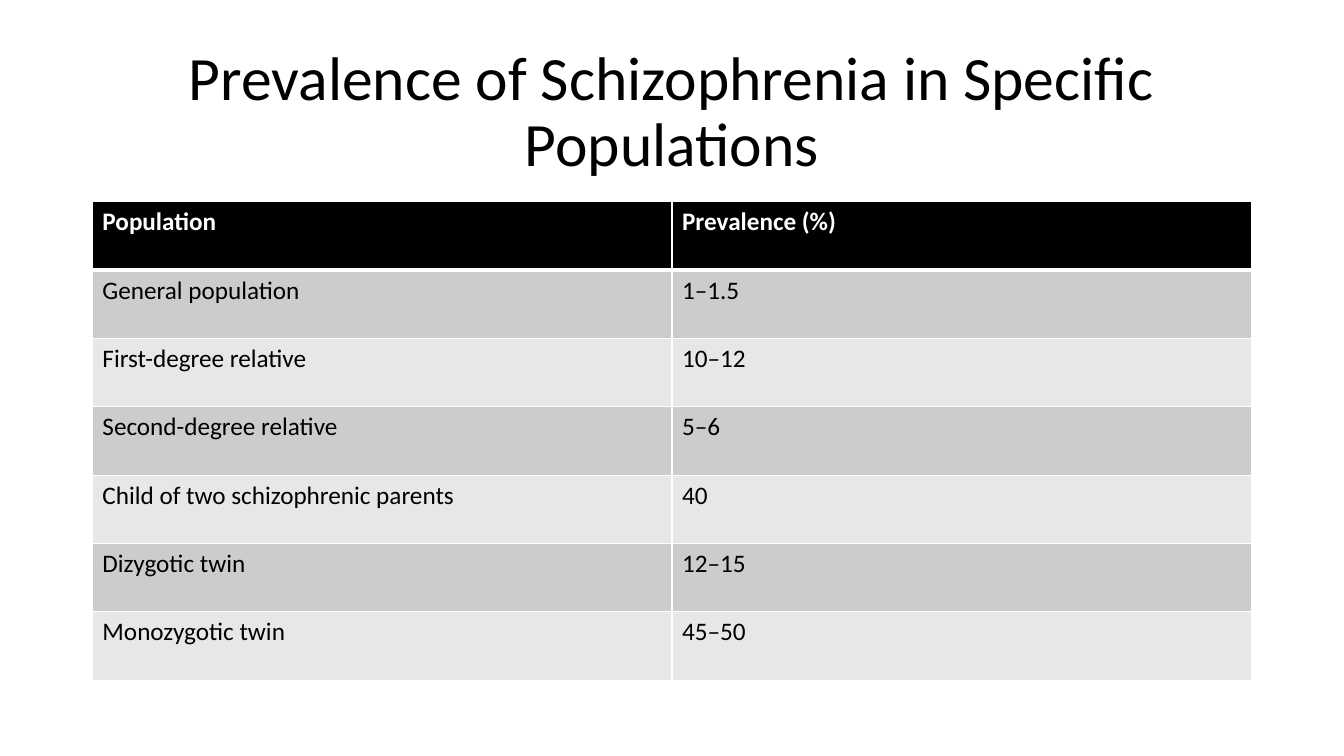
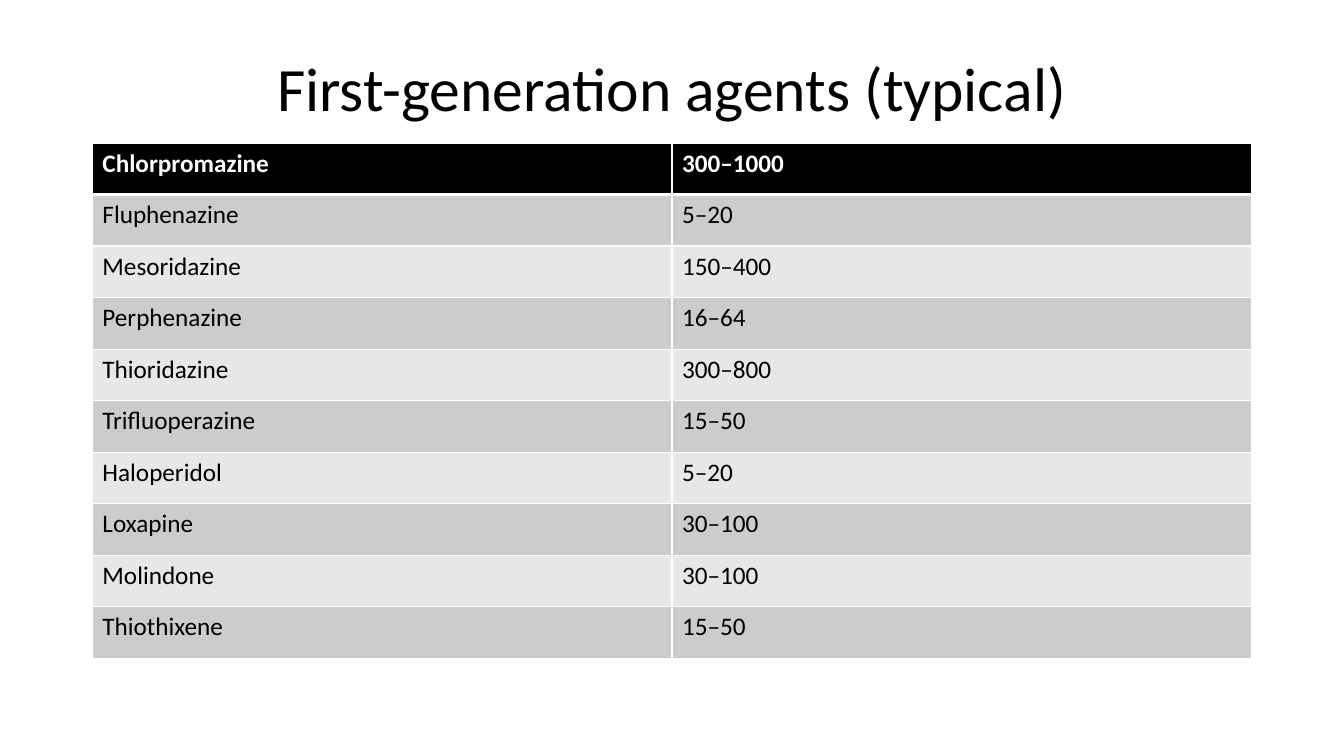
from dataclasses import dataclass

from lxml import etree
from pptx import Presentation
from pptx.dml.color import RGBColor
from pptx.enum import text
from pptx.oxml import ns
from pptx.util import Pt


@dataclass(frozen=True)
class Theme:
    font: str = "Calibri"
    ink: str = "000000"
    paper: str = "FFFFFF"
    bands: tuple = ("CCCCCC", "E7E7E7")
    title_size: int = 44
    cell_size: int = 18
    rule: int = 1
    header_rule: int = 3
    left: int = 66
    width: int = 828
    title_top: float = 28.8


THEME = Theme()

PREVALENCE = [
    ("Population", "Prevalence (%)"),
    ("General population", "1–1.5"),
    ("First-degree relative", "10–12"),
    ("Second-degree relative", "5–6"),
    ("Child of two schizophrenic parents", "40"),
    ("Dizygotic twin", "12–15"),
    ("Monozygotic twin", "45–50"),
]

AGENTS = [
    ("Chlorpromazine", "300–1000"),
    ("Fluphenazine", "5–20"),
    ("Mesoridazine", "150–400"),
    ("Perphenazine", "16–64"),
    ("Thioridazine", "300–800"),
    ("Trifluoperazine", "15–50"),
    ("Haloperidol", "5–20"),
    ("Loxapine", "30–100"),
    ("Molindone", "30–100"),
    ("Thiothixene", "15–50"),
]


def write(tf, content, *, size, color=THEME.ink, bold=False, align=None, spacing=None):
    p = tf.paragraphs[0]
    p.alignment = align
    p.line_spacing = spacing
    r = p.add_run()
    r.text = content
    r.font.name = THEME.font
    r.font.size = Pt(size)
    r.font.bold = bold
    r.font.color.rgb = RGBColor.from_string(color)


def add_title(s, content, height):
    sp = s.shapes.add_textbox(Pt(THEME.left), Pt(THEME.title_top),
                              Pt(THEME.width), Pt(height))
    tf = sp.text_frame
    tf.word_wrap = True
    tf.vertical_anchor = text.MSO_ANCHOR.MIDDLE
    write(tf, content, size=THEME.title_size,
          align=text.PP_ALIGN.CENTER, spacing=0.9)


def set_borders(cell, **widths):
    """Draw the cell's borders; must run before the fill is set."""
    tc_pr = cell._tc.get_or_add_tcPr()
    for side in "LRTB":
        width = Pt(widths.get(side, THEME.rule))
        ln = etree.SubElement(tc_pr, ns.qn(f"a:ln{side}"), w=str(int(width)))
        fill = etree.SubElement(ln, ns.qn("a:solidFill"))
        etree.SubElement(fill, ns.qn("a:srgbClr"), val=THEME.paper)


def style_cell(cell, content, row):
    header = row == 0
    # The heavy rule is shared by the header and the row below it
    heavy = {0: {"B": THEME.header_rule}, 1: {"T": THEME.header_rule}}
    set_borders(cell, **heavy.get(row, {}))
    cell.fill.solid()
    cell.fill.fore_color.rgb = RGBColor.from_string(
        THEME.ink if header else THEME.bands[(row - 1) % 2])
    write(cell.text_frame, content, size=THEME.cell_size, bold=header,
          color=THEME.paper if header else THEME.ink)


def add_table(s, rows, top, height):
    table = s.shapes.add_table(len(rows), len(rows[0]), Pt(THEME.left), Pt(top),
                               Pt(THEME.width), Pt(height)).table
    for i, values in enumerate(rows):
        table.rows[i].height = Pt(height / len(rows))
        for j, value in enumerate(values):
            style_cell(table.cell(i, j), value, i)


def add_table_slide(prs, title, title_height, rows, top, height):
    s = prs.slides.add_slide(prs.slide_layouts[6])
    add_title(s, title, title_height)
    add_table(s, rows, top, height)


def main():
    prs = Presentation()
    prs.slide_width, prs.slide_height = Pt(960), Pt(540)

    # Prevalence by population
    add_table_slide(prs, "Prevalence of Schizophrenia in Specific Populations",
                    104.4, PREVALENCE, top=144, height=342)
    # Typical agents and their ranges
    add_table_slide(prs, "First-generation agents (typical)",
                    73.4, AGENTS, top=102.2, height=368)

    prs.save("out.pptx")


if __name__ == "__main__":
    main()
